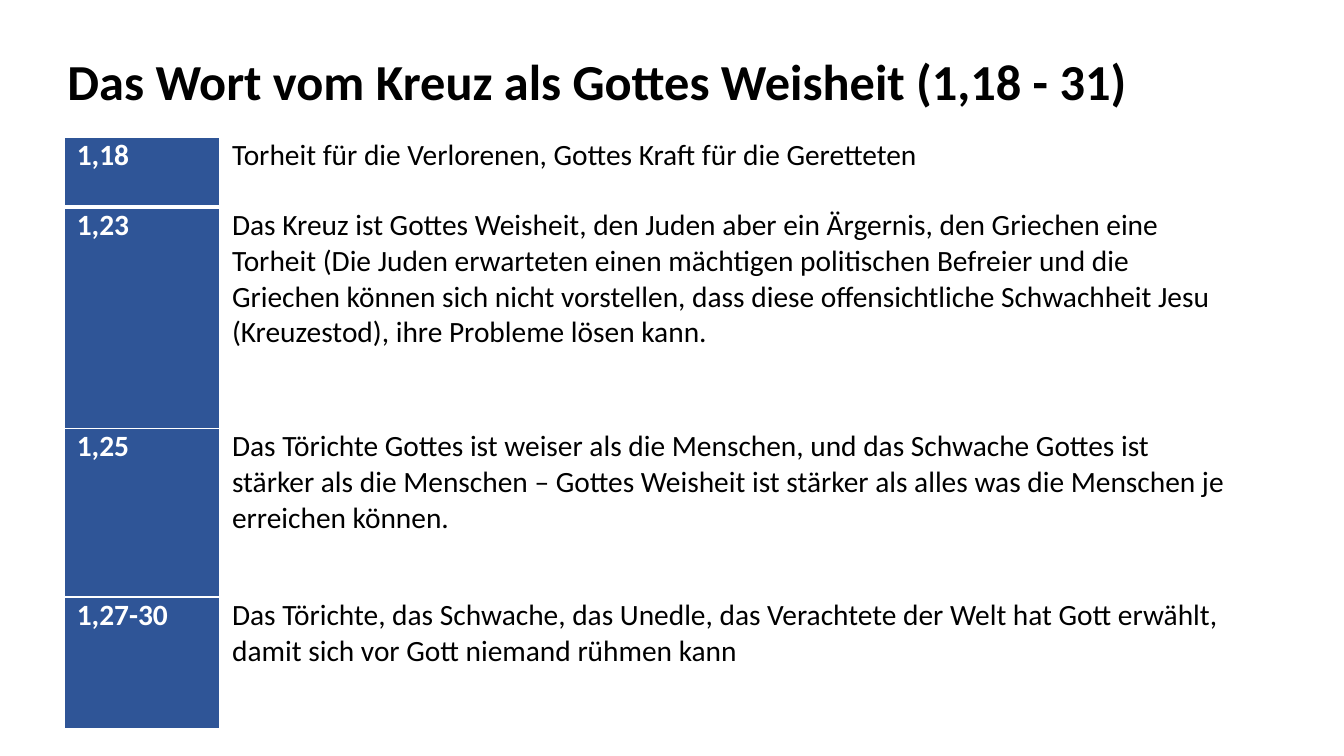
import pptx
import pptx.util
import pptx.dml.color
import pptx.enum.text
import pptx.oxml
import pptx.oxml.ns

Pt = pptx.util.Pt
RGB = pptx.dml.color.RGBColor
BLUE = RGB(0x2F, 0x55, 0x97)
WHITE = RGB(0xFF, 0xFF, 0xFF)
BLACK = RGB(0, 0, 0)

# Verse, statement, row height
ROWS = [
    ("1,18", "Torheit für die Verlorenen, Gottes Kraft für die Geretteten", 49.7),
    ("1,23", "Das Kreuz ist Gottes Weisheit, den Juden aber ein Ärgernis, "
     "den Griechen eine Torheit (Die Juden erwarteten einen mächtigen "
     "politischen Befreier und die Griechen können sich nicht vorstellen, "
     "dass diese offensichtliche Schwachheit Jesu (Kreuzestod), ihre "
     "Probleme lösen kann.", 158.4),
    ("1,25", "Das Törichte Gottes ist weiser als die Menschen, und das "
     "Schwache Gottes ist stärker als die Menschen – Gottes Weisheit ist "
     "stärker als alles was die Menschen je erreichen können.", 120.2),
    ("1,27-30", "Das Törichte, das Schwache, das Unedle, das Verachtete der "
     "Welt hat Gott erwählt, damit sich vor Gott niemand rühmen kann", 93.6),
]
WIDTHS = [110.9, 728.6]


def style(item, form):
    for name, value in form.items():
        setattr(item, name, value)


def write(frame, text, size, bold, color):
    para = frame.paragraphs[0]
    para.alignment = pptx.enum.text.PP_ALIGN.LEFT
    run = para.add_run()
    run.text = text
    style(run.font, {"name": "Calibri", "size": Pt(size), "bold": bold})
    run.font.color.rgb = color


deck = pptx.Presentation()
style(deck, {"slide_width": Pt(960), "slide_height": Pt(540)})
slide = deck.slides.add_slide(deck.slide_layouts[5])

# Title
title = slide.shapes.title
style(title, {"left": Pt(41), "top": Pt(32.4),
              "width": Pt(780.5), "height": Pt(51)})
style(title.text_frame, {
    "word_wrap": False,
    "auto_size": pptx.enum.text.MSO_AUTO_SIZE.SHAPE_TO_FIT_TEXT,
    "vertical_anchor": pptx.enum.text.MSO_ANCHOR.TOP})
write(title.text_frame, "Das Wort vom Kreuz als Gottes Weisheit (1,18 - 31)",
      36, True, BLACK)

# Table of verses
table = slide.shapes.add_table(
    len(ROWS), 2, Pt(45.7), Pt(98.2), Pt(sum(WIDTHS)),
    Pt(sum(row[2] for row in ROWS))).table
style(table, {"first_row": False, "horz_banding": False})
for col, width in zip(table.columns, WIDTHS):
    col.width = Pt(width)

for r, (verse, text, height) in enumerate(ROWS):
    table.rows[r].height = Pt(height)
    looks = [(verse, True, WHITE, BLUE), (text, False, BLACK, WHITE)]
    for c, (words, bold, color, fill) in enumerate(looks):
        cell = table.cell(r, c)
        style(cell, {"margin_left": Pt(9.2), "margin_right": Pt(9.2),
                     "margin_top": 0, "margin_bottom": 0})
        write(cell.text_frame, words, 21, bold, color)
        cell.fill.solid()
        cell.fill.fore_color.rgb = fill

        # White borders, thicker below the first row
        props = cell._tc.get_or_add_tcPr()
        for n, side in enumerate("LRTB"):
            thick = (r, side) in [(0, "B"), (1, "T")]
            props.insert(n, pptx.oxml.parse_xml(
                f'<a:ln{side} {pptx.oxml.ns.nsdecls("a")} '
                f'w="{Pt(3 if thick else 1)}"><a:solidFill>'
                f'<a:srgbClr val="{WHITE}"/></a:solidFill></a:ln{side}>'))

deck.save("out.pptx")
